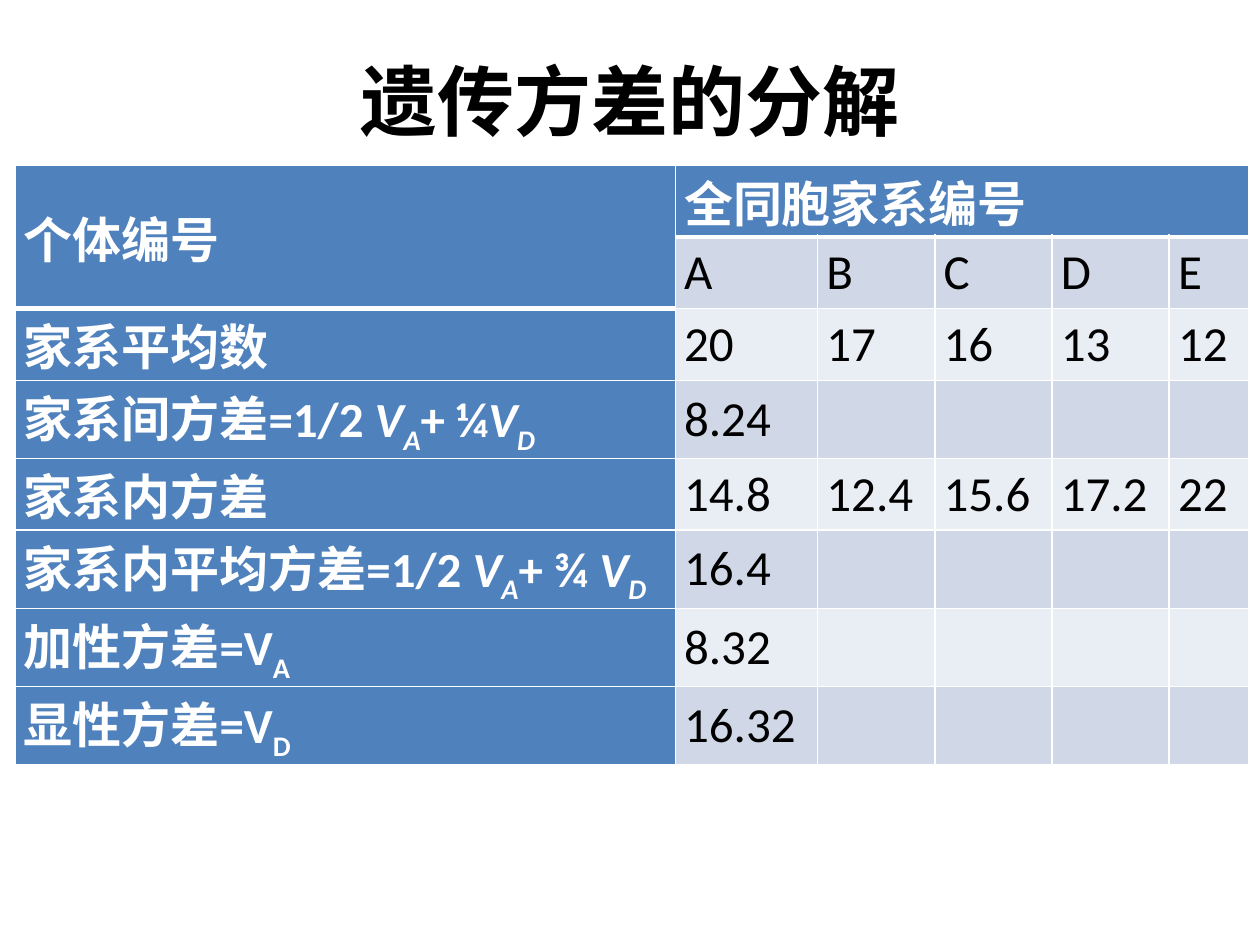
"""Build a slide with a table that decomposes genetic variance by family."""
from dataclasses import dataclass

import pptx
import pptx.dml.color
import pptx.enum.text
import pptx.oxml
import pptx.oxml.ns
import pptx.util

Inches = pptx.util.Inches
Pt = pptx.util.Pt
RGBColor = pptx.dml.color.RGBColor
MSO_ANCHOR = pptx.enum.text.MSO_ANCHOR

WHITE = RGBColor(0xFF, 0xFF, 0xFF)
BLACK = RGBColor(0x00, 0x00, 0x00)
HEADER_BLUE = RGBColor(0x4F, 0x81, 0xBD)
DARK_BAND = RGBColor(0xD0, 0xD8, 0xE8)
LIGHT_BAND = RGBColor(0xE9, 0xED, 0xF4)

COLUMN_WIDTHS = (5.24, 1.13, 0.93, 0.93, 0.93, 0.63)
PLAIN_HEIGHT = 0.57
SUBSCRIPT_HEIGHT = 0.62
HEADER_ROWS = 2


@dataclass(frozen=True)
class Piece:
    text: str
    italic: bool = False
    subscript: bool = False


@dataclass(frozen=True)
class TableRow:
    label: tuple[Piece, ...]
    values: tuple[str, ...]

    def height(self) -> float:
        return SUBSCRIPT_HEIGHT if any(piece.subscript for piece in self.label) else PLAIN_HEIGHT


def variance_label(name: str, fraction: str) -> tuple[Piece, ...]:
    return (
        Piece(f"{name}=1/2 "),
        Piece("V", italic=True),
        Piece("A", italic=True, subscript=True),
        Piece(f"+ {fraction}"),
        Piece("V", italic=True),
        Piece("D", italic=True, subscript=True),
    )


def component_label(name: str, component: str) -> tuple[Piece, ...]:
    return Piece(f"{name}=V"), Piece(component, subscript=True)


ROWS = (
    TableRow((Piece("个体编号"),), ("全同胞家系编号",)),
    TableRow((), ("A", "B", "C", "D", "E")),
    TableRow((Piece("家系平均数"),), ("20", "17", "16", "13", "12")),
    TableRow(variance_label("家系间方差", "¼"), ("8.24",)),
    TableRow((Piece("家系内方差"),), ("14.8", "12.4", "15.6", "17.2", "22")),
    TableRow(variance_label("家系内平均方差", "¾ "), ("16.4",)),
    TableRow(component_label("加性方差", "A"), ("8.32",)),
    TableRow(component_label("显性方差", "D"), ("16.32",)),
)


def add_run(paragraph, piece: Piece, font_name: str, size: float, color: RGBColor, bold: bool) -> None:
    run = paragraph.add_run()
    run.text = piece.text
    run.font.name = font_name
    run.font.size = Pt(size)
    run.font.bold = bold
    run.font.italic = piece.italic
    run.font.color.rgb = color
    if piece.subscript:
        run.font._element.set("baseline", "-25000")


def set_borders(cell, top: float, bottom: float) -> None:
    properties = cell._tc.get_or_add_tcPr()
    for side, width in (("L", 1), ("R", 1), ("T", top), ("B", bottom)):
        properties.append(pptx.oxml.parse_xml(
            f'<a:ln{side} {pptx.oxml.ns.nsdecls("a")} w="{Pt(width)}">'
            f'<a:solidFill><a:srgbClr val="{WHITE}"/></a:solidFill></a:ln{side}>'
        ))


def style_cell(cell, pieces: tuple[Piece, ...], fill: RGBColor, header: bool, top: float, bottom: float) -> None:
    set_borders(cell, top, bottom)
    cell.fill.solid()
    cell.fill.fore_color.rgb = fill
    cell.vertical_anchor = MSO_ANCHOR.MIDDLE
    cell.margin_left = cell.margin_right = Inches(0.07)
    cell.margin_top = cell.margin_bottom = 0
    paragraph = cell.text_frame.paragraphs[0]
    for piece in pieces:
        add_run(paragraph, piece, "Calibri", 28, WHITE if header else BLACK, header)


def add_title(slide, text: str) -> None:
    title = slide.shapes.add_textbox(Inches(0.5), Inches(0.36), Inches(9), Inches(0.87))
    title.text_frame.word_wrap = True
    title.text_frame.vertical_anchor = MSO_ANCHOR.MIDDLE
    paragraph = title.text_frame.paragraphs[0]
    paragraph.alignment = pptx.enum.text.PP_ALIGN.CENTER
    add_run(paragraph, Piece(text), "Times New Roman", 44, BLACK, True)


def add_variance_table(slide) -> None:
    total_height = sum(row.height() for row in ROWS)
    frame = slide.shapes.add_table(
        len(ROWS), len(COLUMN_WIDTHS), Inches(0.12), Inches(1.31), Inches(9.8), Inches(total_height)
    )
    table = frame.table
    for column, width in zip(table.columns, COLUMN_WIDTHS):
        column.width = Inches(width)
    for row_index, row in enumerate(ROWS):
        table.rows[row_index].height = Inches(row.height())
        band = DARK_BAND if row_index % 2 else LIGHT_BAND
        for column_index in range(len(COLUMN_WIDTHS)):
            is_label = column_index == 0
            header = is_label or row_index == 0
            last_header_row = HEADER_ROWS - 1 if is_label else 0
            if is_label:
                pieces = row.label
            else:
                pieces = tuple(Piece(text) for text in row.values[column_index - 1:column_index])
            style_cell(
                table.cell(row_index, column_index),
                pieces,
                HEADER_BLUE if header else band,
                header,
                top=3 if row_index == last_header_row + 1 else 1,
                bottom=3 if row_index == last_header_row or (is_label and row_index == 0) else 1,
            )
    table.cell(0, 0).merge(table.cell(HEADER_ROWS - 1, 0))
    table.cell(0, 1).merge(table.cell(0, len(COLUMN_WIDTHS) - 1))


def main() -> None:
    presentation = pptx.Presentation()
    presentation.slide_width = Inches(10)
    presentation.slide_height = Inches(7.5)
    slide = presentation.slides.add_slide(presentation.slide_layouts[6])
    add_title(slide, "遗传方差的分解")
    add_variance_table(slide)
    presentation.save("out.pptx")


if __name__ == "__main__":
    main()
